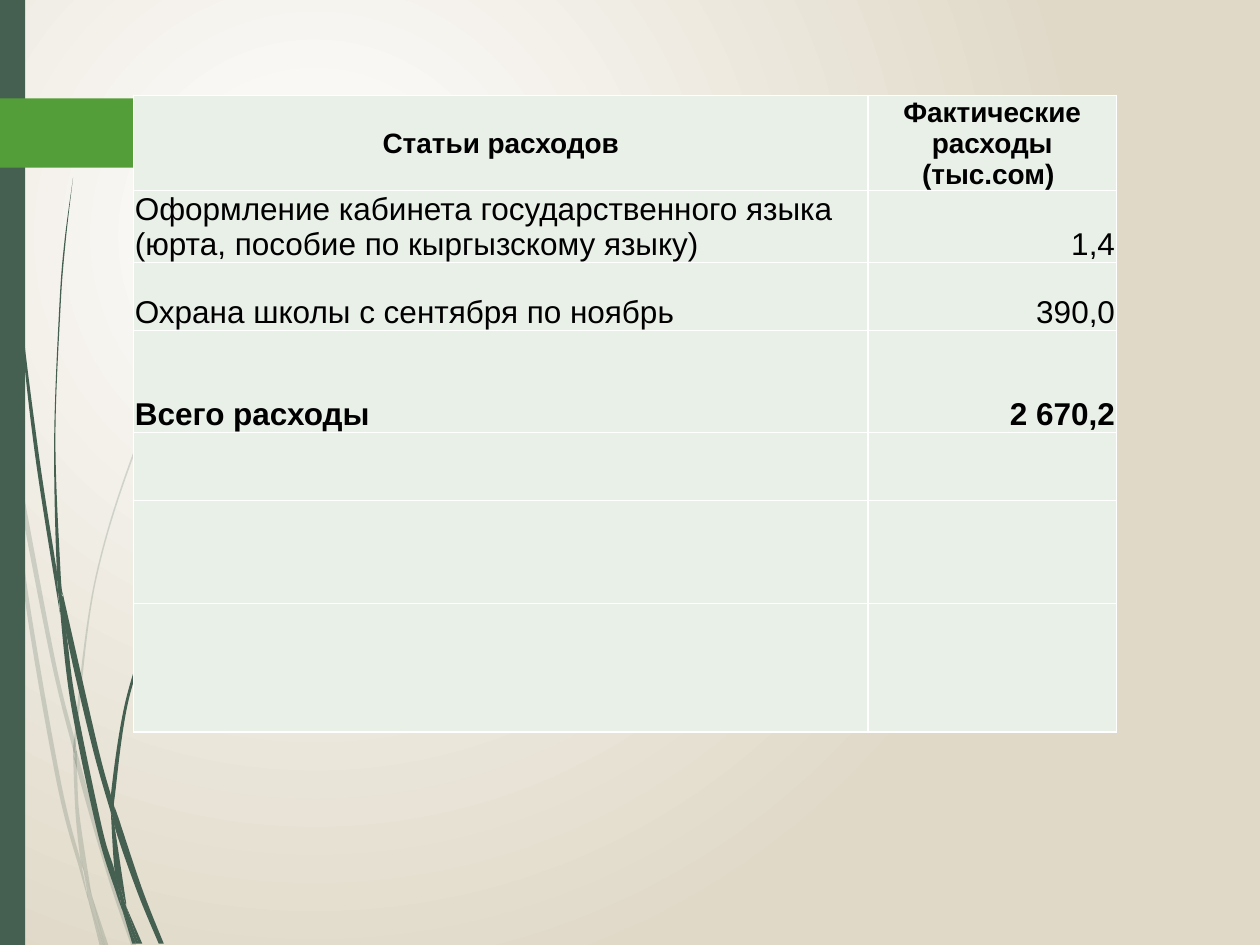
from dataclasses import dataclass

from lxml import etree
from pptx import Presentation
from pptx.dml.color import RGBColor
from pptx.enum.shapes import MSO_SHAPE
from pptx.enum.text import MSO_ANCHOR, PP_ALIGN
from pptx.oxml.ns import qn
from pptx.util import Inches, Pt

LEFT, CENTER, RIGHT = PP_ALIGN.LEFT, PP_ALIGN.CENTER, PP_ALIGN.RIGHT
MIDDLE, BOTTOM = MSO_ANCHOR.MIDDLE, MSO_ANCHOR.BOTTOM
RECTANGLE, PENTAGON = MSO_SHAPE.RECTANGLE, MSO_SHAPE.PENTAGON
BLANK_LAYOUT = 6


@dataclass(frozen=True)
class Theme:
    font: str = "Arial"
    header_size: int = 16
    body_size: int = 18
    text: str = "000000"
    glow: str = "FFFFFF"
    sand: str = "E0D9C8"
    dark: str = "455F51"
    accent: str = "549E39"
    cell: str = "E9F0E8"
    border: str = "FFFFFF"
    border_width: int = 1
    pale_opacity: int = 20


THEME = Theme()

# Each blade of grass is a pair of edges: one out, one back (inches)
PALE_BLADES = [
    ([(0.08, 3.5), (0.06, 3.22), (0, 2.82)], [(0, 2.99), (0.07, 3.44), (0.08, 3.5)]),
    ([(0.1, 3.45), (0.12, 3.76), (0.4, 5.22), (0.59, 5.99)],
     [(0.59, 5.86), (0.43, 5.2), (0.1, 3.45)]),
    ([(0.61, 5.96), (0.64, 6.07), (0.88, 6.92), (1.08, 7.5)],
     [(1.04, 7.5), (0.85, 6.94), (0.61, 6.1), (0.61, 5.96)]),
    ([(0.73, 7.11), (0.86, 7.5)], [(0.83, 7.5), (0.73, 7.11)]),
    ([(0.08, 3.5), (0.19, 4.7), (0.45, 6.21), (0.64, 6.93), (0.7, 7.14)],
     [(0.64, 6.83), (0.48, 6.19), (0.22, 4.69), (0.12, 3.76), (0.08, 3.5)]),
    ([(0.58, 5.99), (0.6, 6.46), (0.64, 6.83), (0.67, 6.92), (0.73, 7.11)],
     [(0.72, 7.06), (0.63, 6.46), (0.61, 6.1), (0.58, 5.99)]),
    ([(0.61, 5.96), (0.61, 5.84), (0.76, 4.62), (1.11, 3.49), (1.59, 2.45),
      (1.87, 1.98), (2.01, 1.75), (2.17, 1.54)],
     [(2.17, 1.53), (2.01, 1.75), (1.86, 1.97), (1.58, 2.44), (1.1, 3.48),
      (0.75, 4.61), (0.59, 5.84), (0.61, 5.96)]),
    ([(0.7, 7.14), (0.79, 7.5)], [(0.82, 7.5), (0.7, 7.14)]),
    ([(0.58, 5.99), (0.61, 6.1)], [(0.61, 5.96), (0.59, 5.86), (0.58, 5.99)]),
    ([(0.65, 6.83), (0.69, 7.07), (0.7, 7.14), (0.82, 7.5)],
     [(0.83, 7.5), (0.73, 7.11), (0.67, 6.92), (0.65, 6.83)]),
]
DARK_BLADES = [
    ([(0.02, 0), (0.03, 0.48), (0.05, 1.1), (0.14, 2.33), (0.27, 3.55), (0.46, 4.77),
      (0.47, 4.81)],
     [(0.45, 4.57), (0.45, 4.53), (0.3, 3.55), (0.15, 2.32), (0.06, 1.09), (0.04, 0.48),
      (0.03, 0)]),
    ([(0.5, 4.72), (0.53, 5.05), (0.73, 5.92), (0.88, 6.45)],
     [(0.88, 6.31), (0.77, 5.9), (0.5, 4.72)]),
    ([(0.91, 6.41), (0.94, 6.49), (1.13, 7.06), (1.3, 7.49)],
     [(1.26, 7.49), (1.09, 7.08), (0.91, 6.56), (0.91, 6.41)]),
    ([(0.47, 4.77), (0.56, 5.57), (0.77, 6.59), (0.92, 7.08), (0.97, 7.22)],
     [(0.96, 7.17), (0.91, 6.91), (0.81, 6.57), (0.6, 5.56), (0.53, 5.05), (0.47, 4.77)]),
    ([(0.5, 4.72), (0.48, 4.53), (0.44, 3.49), (0.48, 2.45), (0.52, 1.93), (0.58, 1.41)],
     [(0.58, 1.41), (0.51, 1.93), (0.47, 2.45), (0.43, 3.49), (0.45, 4.49), (0.49, 4.72)]),
    ([(1, 7.19), (1.1, 7.49)], [(1.13, 7.49), (1, 7.19)]),
    ([(0.45, 4.49), (0.45, 4.53), (0.47, 4.77), (0.53, 5.05)],
     [(0.5, 4.72), (0.49, 4.72), (0.45, 4.49)]),
    ([(0.91, 6.41), (0.91, 6.33), (1.03, 5.52), (1.31, 4.76), (1.69, 4.06),
      (1.91, 3.74), (2.03, 3.59), (2.16, 3.44)],
     [(2.15, 3.44), (2.03, 3.58), (1.91, 3.73), (1.68, 4.05), (1.29, 4.74),
      (1.01, 5.51), (0.88, 6.31), (0.91, 6.41)]),
    ([(0.97, 7.22), (1.05, 7.49)], [(1.08, 7.49), (0.97, 7.22)]),
    ([(0.88, 6.45), (0.91, 6.91), (0.96, 7.06), (1, 7.19)],
     [(1, 7.16), (0.91, 6.56), (0.9, 6.51), (0.88, 6.45)]),
    ([(0.88, 6.45), (0.9, 6.51), (0.91, 6.56)],
     [(0.91, 6.41), (0.88, 6.31), (0.88, 6.45)]),
    ([(0.91, 6.91), (0.96, 7.17), (0.97, 7.22), (1.08, 7.49)],
     [(1.1, 7.49), (1, 7.19), (0.96, 7.06), (0.91, 6.91)]),
]

# Expense table
COLUMN_WIDTHS = [5.83, 1.97]
ROW_HEIGHTS = [0.51, 0.52, 0.54, 0.81, 0.54, 0.82, 1.02]
HEADER = ("Статьи расходов", "Фактические расходы (тыс.сом) ")
EXPENSES = [
    ("Оформление кабинета государственного языка (юрта, пособие по кыргызскому языку)", "1,4"),
    ("Охрана школы с сентября по ноябрь", "390,0"),
]
TOTAL = ("Всего расходы", "2 670,2")


def paint(shape, color, opacity=100):
    """Plain fill without line or shadow."""
    shape.shadow.inherit = False
    shape.line.fill.background()
    shape.fill.solid()
    shape.fill.fore_color.rgb = RGBColor.from_string(color)
    if opacity < 100:
        color_node = shape.element.spPr.find(f"{qn('a:solidFill')}/{qn('a:srgbClr')}")
        etree.SubElement(color_node, qn("a:alpha"), val=str(opacity * 1000))


def set_background(slide):
    """Round glow with its centre in the upper left quarter."""
    fill = slide.background.fill
    fill.gradient()
    for stop, color in zip(fill.gradient_stops, (THEME.glow, THEME.sand)):
        stop.color.rgb = RGBColor.from_string(color)
    gradient = slide.element.find(f".//{qn('a:gradFill')}")
    gradient.remove(gradient.find(qn("a:lin")))
    circle = etree.SubElement(gradient, qn("a:path"), {"path": "circle"})
    etree.SubElement(circle, qn("a:fillToRect"), l="50000", t="50000", r="100000", b="100000")


def curve_handles(nodes):
    """Two Bezier handles for each stretch of a smooth curve through the nodes."""
    padded = [nodes[0], *nodes, nodes[-1]]
    return [
        ([q + (r - p) / 6 for p, q, r in zip(a, b, c)],
         [r - (s - q) / 6 for q, r, s in zip(b, c, d)])
        for a, b, c, d in zip(padded, padded[1:], padded[2:], padded[3:])]


def bend_lines(shape, handles):
    """Turn the outline's straight lines into curves where handles are given."""
    lines = list(shape.element.iter(qn("a:lnTo")))
    for line, pair in zip(lines, handles):
        for index, (x, y) in enumerate(pair):
            point = etree.Element(qn("a:pt"), x=str(Inches(x) - shape.left),
                                  y=str(Inches(y) - shape.top))
            line.insert(index, point)
        if pair:
            line.tag = qn("a:cubicBezTo")


def add_blades(slide, blades, opacity=100):
    group = slide.shapes.add_group_shape()
    for edge_out, edge_back in blades:
        start, *rest = [(Inches(x), Inches(y)) for x, y in edge_out + edge_back]
        builder = group.shapes.build_freeform(*start)
        builder.add_line_segments(rest, close=True)
        shape = builder.convert_to_shape()
        bend_lines(shape, [*curve_handles(edge_out), (), *curve_handles(edge_back)])
        paint(shape, THEME.dark, opacity)


def add_preset(slide, kind, left, top, width, height, color):
    box = [Inches(length) for length in (left, top, width, height)]
    paint(slide.shapes.add_shape(kind, *box), color)


def style_cell(cell):
    cell.fill.solid()
    cell.fill.fore_color.rgb = RGBColor.from_string(THEME.cell)
    properties = cell._tc.get_or_add_tcPr()
    for index, side in enumerate(("lnL", "lnR", "lnT", "lnB")):
        line = etree.Element(qn(f"a:{side}"), w=str(Pt(THEME.border_width)))
        fill = etree.SubElement(line, qn("a:solidFill"))
        etree.SubElement(fill, qn("a:srgbClr"), val=THEME.border)
        properties.insert(index, line)


def write_cell(cell, text, size, bold, alignment, anchor=BOTTOM):
    cell.margin_left = cell.margin_right = cell.margin_top = Pt(0.75)
    cell.margin_bottom = 0
    cell.vertical_anchor = anchor
    cell.text_frame.text = text
    paragraph = cell.text_frame.paragraphs[0]
    paragraph.alignment = alignment
    font = paragraph.runs[0].font
    font.name, font.size, font.bold = THEME.font, Pt(size), bold
    font.color.rgb = RGBColor.from_string(THEME.text)


def add_expense_table(slide):
    frame = slide.shapes.add_table(
        len(ROW_HEIGHTS), len(COLUMN_WIDTHS), Inches(1.06), Inches(0.76),
        Inches(sum(COLUMN_WIDTHS)), Inches(5.15))
    table = frame.table
    table.first_row = table.horz_banding = False
    for column, width in zip(table.columns, COLUMN_WIDTHS):
        column.width = Inches(width)
    for row, height in zip(table.rows, ROW_HEIGHTS):
        row.height = Inches(height)
    for cell in table.iter_cells():
        style_cell(cell)
    for column, (text, anchor) in enumerate(zip(HEADER, (MIDDLE, BOTTOM))):
        write_cell(table.cell(0, column), text, THEME.header_size, True, CENTER, anchor)
    for row, record in enumerate([*EXPENSES, TOTAL], start=1):
        for column, (text, alignment) in enumerate(zip(record, (LEFT, RIGHT))):
            write_cell(table.cell(row, column), text, THEME.body_size,
                       record is TOTAL, alignment)


def main():
    presentation = Presentation()
    presentation.slide_width, presentation.slide_height = Inches(10), Inches(7.5)
    slide = presentation.slides.add_slide(presentation.slide_layouts[BLANK_LAYOUT])
    set_background(slide)
    # Decoration at the left edge
    add_blades(slide, PALE_BLADES, THEME.pale_opacity)
    add_blades(slide, DARK_BLADES)
    add_preset(slide, RECTANGLE, 0, 0, 0.2, 7.5, THEME.dark)
    add_preset(slide, PENTAGON, 0, 0.78, 1.49, 0.55, THEME.accent)
    # Content
    add_expense_table(slide)
    presentation.save("out.pptx")


if __name__ == "__main__":
    main()
